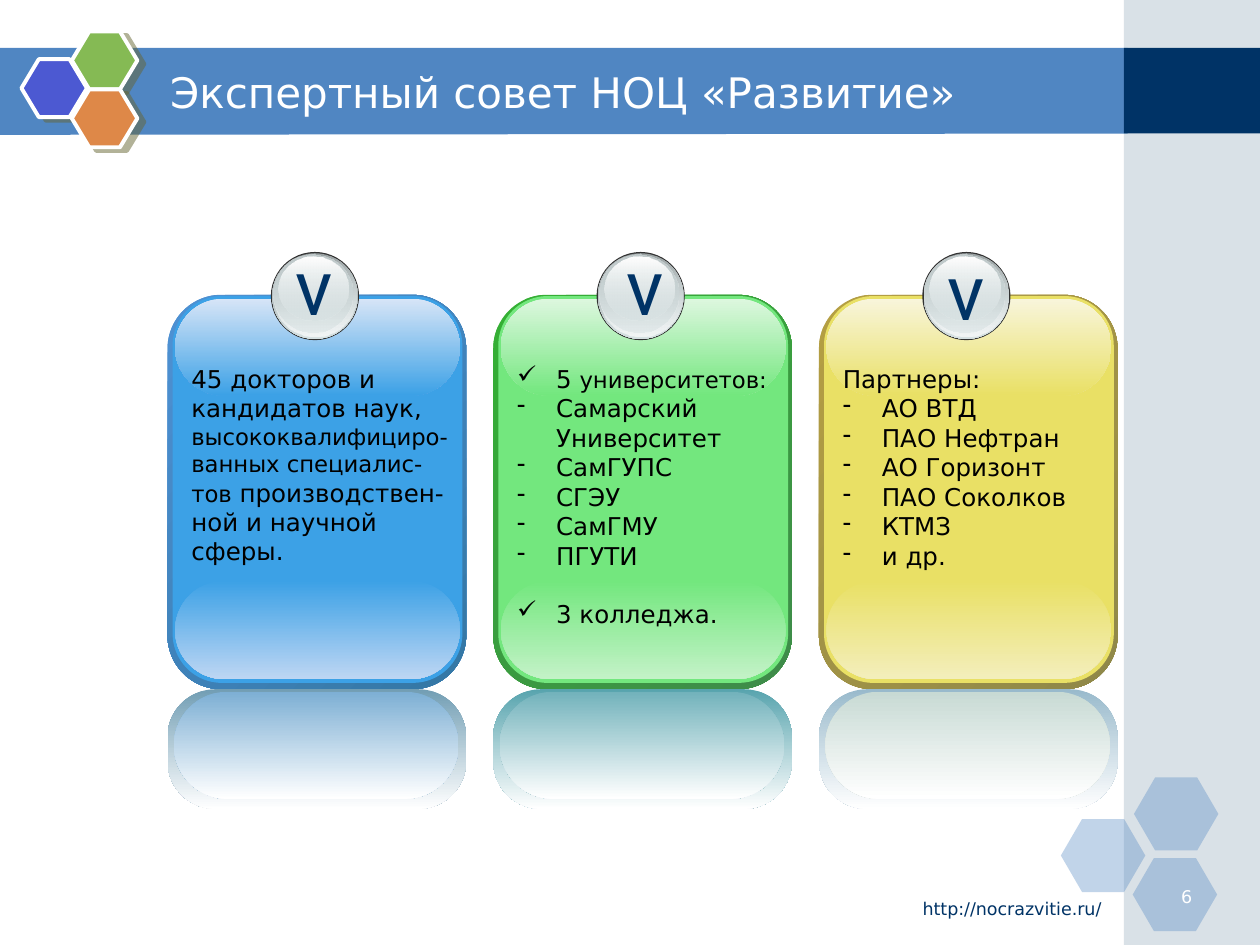
from lxml.etree import SubElement
from pptx import Presentation
from pptx.dml.color import RGBColor
from pptx.enum.shapes import MSO_SHAPE as Shape
from pptx.enum.text import MSO_ANCHOR as Anchor, MSO_AUTO_SIZE as AutoSize, PP_ALIGN as Align
from pptx.oxml.ns import qn
from pptx.util import Inches, Pt

COLORS = {
    "white": "FFFFFF", "black": "000000", "navy": "003366", "band": "5086C2",
    "side": "A0B5C4", "violet": "4C59D2", "green": "85BA54", "orange": "DE8848",
    "shadow": "666633", "rim": "333333", "steel": "99A1A2", "silver": "D6E1E2",
    "pale": "F2F5F5", "ash": "C1CBCC",
}
FONT, MARK_FONT = "DejaVu Sans", "Roboto"
INDENT = 0.31

# Colours of each card: frame, face, glosses at bottom and top, reflections
CARDS = [
    dict(frame=("4E91D4", "3477A4"), face="3CA1E6", low="BDD6F3", high="D7E5F7",
         outer="729EB4", inner="7DAFD4", mark=(0.92, -0.5),
         lines=[("", [("45 докторов и кандидатов наук, ", 14),
                      ("высококвалифициро-ванных специалис-тов", 13),
                      (" производствен-ной и научной сферы.", 14)])]),
    dict(frame=("34B034", "3F8B4A"), face="73E77E", low="C3F2C7", high="DDF7DF",
         outer="58A4AE", inner="72B2BB", mark=(0.96, -0.5),
         lines=[("✓", [("5 ", 14), ("университетов:", 13)])]
         + [("-", [(name, 14)]) for name in
            ("Самарский Университет", "СамГУПС", "СГЭУ", "СамГМУ", "ПГУТИ")]
         + [("✓", [("3 колледжа.", 14)])]),
    dict(frame=("B59F43", "8F8849"), face="E9E065", low="F3EEBB", high="F8F5DB",
         outer="99BACC", inner="C8DAD4", mark=(0.92, -0.46),
         lines=[("", [("Партнеры:", 14)])]
         + [("-", [(name, 14)]) for name in
            ("АО ВТД", "ПАО Нефтран", "АО Горизонт", "ПАО Соколков", "КТМЗ", "и др.")]),
]


def rgb(name):
    return RGBColor.from_string(COLORS.get(name, name))


def set_alpha(color_node, percent):
    SubElement(color_node, qn("a:alpha"), val=str(percent * 1000))


def add_part(parts, kind, box, fill, alpha=None, adjust=None, angle=90):
    """Add a preset shape; fill is one colour, or a pair for a gradient."""
    shape = parts.add_shape(kind, *map(Inches, box))
    shape.shadow.inherit = False
    shape.line.fill.background()
    if adjust is not None:
        shape.adjustments[0] = adjust
    if isinstance(fill, tuple):
        shape.fill.gradient()
        shape.fill.gradient_angle = 360 - angle
        for stop, color in zip(shape.fill.gradient_stops, fill):
            stop.color.rgb = rgb(color)
        opacities = alpha or (None, None)
    else:
        shape.fill.solid()
        shape.fill.fore_color.rgb = rgb(fill)
        opacities = (alpha,)
    fill_colors = [node for node in shape.element.spPr.iter(qn("a:srgbClr"))]
    for node, opacity in zip(fill_colors, opacities):
        if opacity is not None:
            set_alpha(node, opacity)
    return shape


def add_span(para, text, size=14, color="black", font=FONT):
    span = para.add_run()
    span.text = text
    span.font.size = Pt(size)
    span.font.name = font
    span.font.color.rgb = rgb(color)


def add_text(parts, box, text, align=Align.LEFT, wrap=True, **style):
    frame = parts.add_textbox(*map(Inches, box)).text_frame
    frame.word_wrap = wrap
    frame.paragraphs[0].alignment = align
    add_span(frame.paragraphs[0], text, **style)


def set_bullet(para, mark):
    props = para._p.get_or_add_pPr()
    props.set("marL", str(Inches(INDENT)))
    props.set("indent", str(-Inches(INDENT)))
    SubElement(props, qn("a:buChar"), char=mark)


def add_backdrop(page):
    """Header band, side strip and pale hexagons in the corner."""
    corners = [(0, 0.38), (8.95, 0.38), (8.95, 1.06), (0, 1.07)]
    points = [(Inches(x), Inches(y)) for x, y in corners]
    builder = page.shapes.build_freeform(*points[0])
    builder.add_line_segments(points[1:], close=True)
    band = builder.convert_to_shape()
    band.shadow.inherit = False
    band.fill.solid()
    band.fill.fore_color.rgb = rgb("band")
    band.line.fill.background()

    add_part(page.shapes, Shape.RECTANGLE, (8.92, 0, 1.08, 7.5), "side", alpha=40)
    add_part(page.shapes, Shape.RECTANGLE, (8.92, 0.38, 1.08, 0.68), "navy")
    for left, top in ((8.42, 6.5), (9, 6.17), (8.99, 6.81)):
        add_part(page.shapes, Shape.HEXAGON, (left, top, 0.67, 0.58), "band",
                 alpha=35, adjust=0.29)


def add_emblem(page, left, top):
    """Three outlined hexagons with hard shadows."""
    group = page.shapes.add_group_shape()
    for dx, dy, color in ((0, 0.22, "violet"), (0.4, 0, "green"), (0.4, 0.46, "orange")):
        cell = add_part(group.shapes, Shape.HEXAGON, (left + dx, top + dy, 0.52, 0.46),
                        color, adjust=0.3)
        cell.line.color.rgb = rgb("white")
        cell.line.width = Pt(2.25)
        effects = cell.element.spPr.find(qn("a:effectLst"))
        cast = SubElement(effects, qn("a:outerShdw"), dist=str(Pt(4.5)),
                          dir=str(27 * 60000), algn="ctr", rotWithShape="0")
        set_alpha(SubElement(cast, qn("a:srgbClr"), val=COLORS["shadow"]), 50)


def add_title(page, box, text):
    title = page.shapes.title
    title.left, title.top, title.width, title.height = map(Inches, box)
    frame = title.text_frame
    frame.auto_size = AutoSize.NONE
    frame.vertical_anchor = Anchor.MIDDLE
    frame.paragraphs[0].alignment = Align.LEFT
    add_span(frame.paragraphs[0], text, size=24, color="white")


def add_badge(parts, left, top):
    """Glass button built from nested discs."""
    discs = [
        ((0, 0, 0.7, 0.7), "rim", None),
        ((0.01, 0.01, 0.68, 0.68), ("steel", "silver"), None),
        ((0.02, 0.01, 0.66, 0.66), ("silver", "pale"), (0, None)),
        ((0.02, 0.02, 0.63, 0.62), ("ash", "silver"), (None, 48)),
        ((0.06, 0.04, 0.56, 0.5), ("white", "silver"), (None, 38)),
    ]
    for (dx, dy, width, height), fill, alpha in discs:
        add_part(parts, Shape.OVAL, (left + dx, top + dy, width, height), fill, alpha=alpha)


def add_card_text(parts, box, lines):
    frame = parts.add_textbox(*map(Inches, box)).text_frame
    frame.word_wrap = True
    for index, (mark, spans) in enumerate(lines):
        para = frame.paragraphs[0] if index == 0 else frame.add_paragraph()
        if mark == "✓" and index:
            para.space_before = Pt(16.5)
        if mark:
            set_bullet(para, mark)
        for text, size in spans:
            add_span(para, text, size=size)


def add_card(page, left, top, card):
    """Glossy card with a badge, its text and a reflection below."""
    parts = page.shapes.add_group_shape().shapes
    face = card["face"]
    layers = [
        ((0, 0, 2.37, 3.13), card["frame"], 0.18, 45),
        ((0.04, 0.01, 2.3, 3.07), face, 0.17, 90),
        ((0.06, 2.27, 2.26, 0.78), (face, card["low"]), 0.5, 90),
        ((0.06, 0.03, 2.26, 0.77), (card["high"], face), 0.5, 90),
        ((0, 3.13, 2.37, 0.95), (card["outer"], "white"), 0.4, 90),
        ((0.05, 3.15, 2.26, 0.85), (card["inner"], "white"), 0.5, 90),
    ]
    for (dx, dy, width, height), fill, adjust, angle in layers:
        add_part(parts, Shape.ROUNDED_RECTANGLE, (left + dx, top + dy, width, height),
                 fill, adjust=adjust, angle=angle)
    add_badge(parts, left + 0.82, top - 0.34)
    dx, dy = card["mark"]
    add_text(parts, (left + dx, top + dy, 0.43, 0.84), "v", align=Align.CENTER,
             wrap=False, size=44, color="navy", font=MARK_FONT)
    add_card_text(parts, (left + 0.09, top + 0.5, 2.25, 2.25), card["lines"])


def main():
    deck = Presentation()
    deck.slide_width, deck.slide_height = Inches(10), Inches(7.5)
    page = deck.slides.add_slide(deck.slide_layouts[5])

    add_backdrop(page)
    add_emblem(page, 0.17, 0.25)
    add_title(page, (1.25, 0.42, 7.33, 0.62), "Экспертный совет НОЦ «Развитие»")
    # Bring the title in front of the band
    page.shapes.element.append(page.shapes.title.element)

    # Cards at equal steps
    first, last = 1.33, 6.5
    step = (last - first) / (len(CARDS) - 1)
    for index, card in enumerate(CARDS):
        add_card(page, first + index * step, 2.34, card)

    # Footer
    add_text(page.shapes, (5.67, 7.08, 3.17, 0.26), "http://nocrazvitie.ru/",
             align=Align.RIGHT, size=10, color="navy")
    add_text(page.shapes, (9.06, 6.98, 0.5, 0.25), "6",
             align=Align.RIGHT, size=10, color="white")
    deck.save("out.pptx")


if __name__ == "__main__":
    main()
